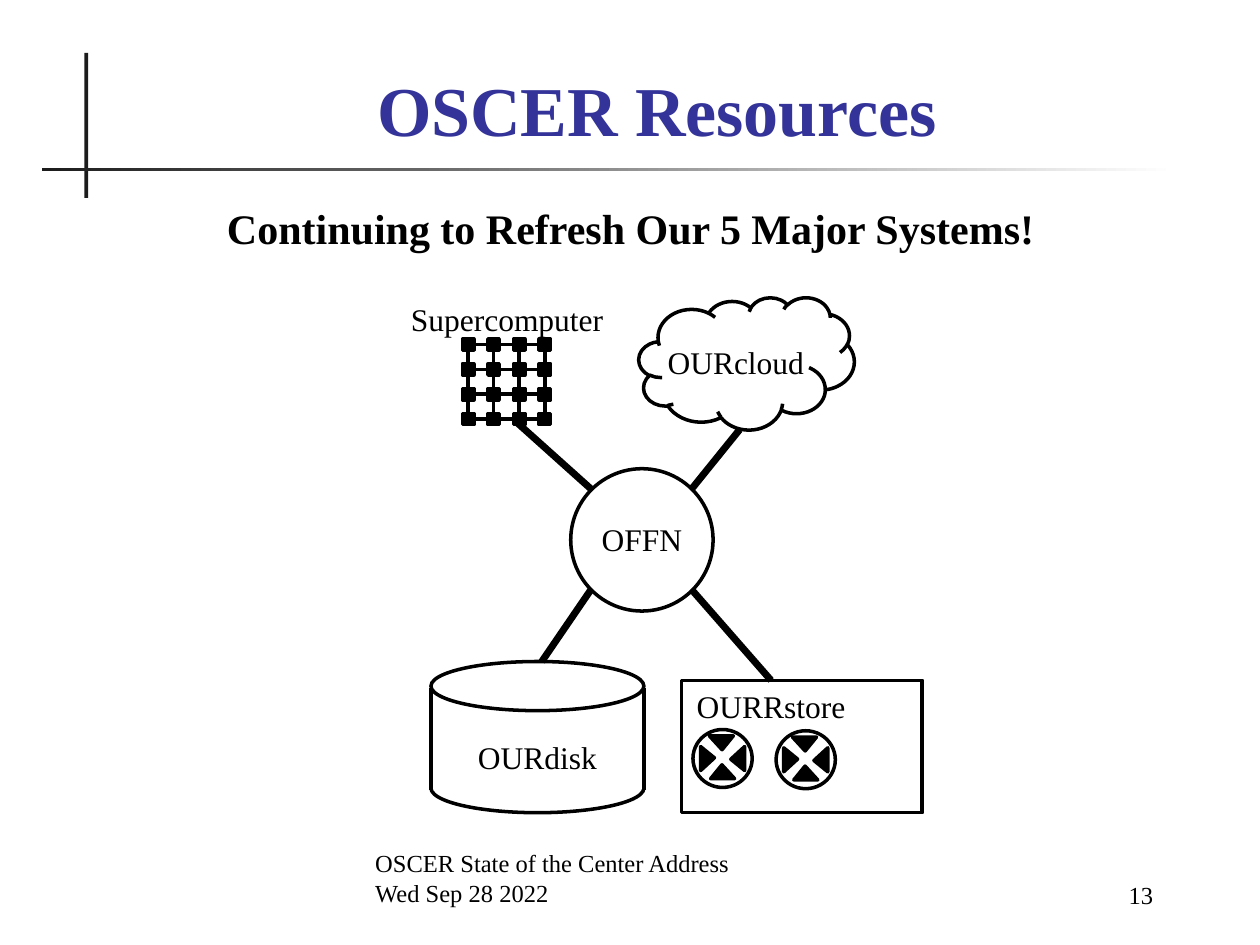
from dataclasses import dataclass
from itertools import product

from lxml import etree
from pptx import Presentation
from pptx.dml.color import RGBColor
from pptx.enum.shapes import MSO_CONNECTOR, MSO_SHAPE
from pptx.enum.text import MSO_ANCHOR, PP_ALIGN
from pptx.oxml.ns import qn
from pptx.util import Inches, Pt

RECT, OVAL = MSO_SHAPE.RECTANGLE, MSO_SHAPE.OVAL
CLOUD, TRIANGLE = MSO_SHAPE.CLOUD, MSO_SHAPE.ISOSCELES_TRIANGLE
STRAIGHT = MSO_CONNECTOR.STRAIGHT
TOP, BOTTOM = MSO_ANCHOR.TOP, MSO_ANCHOR.BOTTOM
LEFT, CENTER, RIGHT = PP_ALIGN.LEFT, PP_ALIGN.CENTER, PP_ALIGN.RIGHT
COLUMNS, ROWS = 100, 75


@dataclass(frozen=True)
class Theme:
    """Colours, font, type sizes and line widths of the slide."""
    font: str = "Times New Roman"
    ink: str = "000000"
    paper: str = "FFFFFF"
    accent: str = "333399"
    rule: str = "1C1C1C"
    title: int = 40
    subtitle: int = 24
    label: int = 18
    footer: int = 14
    outline: int = 2
    link: int = 4


THEME = Theme()


def grid(*cells):
    """Turn grid columns or rows, a tenth of an inch each, into lengths."""
    return [Inches(cell / 10) for cell in cells]


def rgb(code):
    """Turn a hex code into a colour."""
    return RGBColor.from_string(code)


def add_text(slide, box, lines, size, align=CENTER, anchor=TOP,
             color=THEME.ink, bold=False, top_inset=0.5):
    """Add a wrapped text box with one paragraph per line."""
    frame = slide.shapes.add_textbox(*grid(*box)).text_frame
    frame.word_wrap = True
    frame.vertical_anchor = anchor
    frame.margin_top, = grid(top_inset)
    frame.text = "\n".join(lines)
    for paragraph in frame.paragraphs:
        paragraph.alignment = align
        paragraph.font.name = THEME.font
        paragraph.font.size = Pt(size)
        paragraph.font.bold = bold
        paragraph.font.color.rgb = rgb(color)


def add_label(slide, box, name):
    """Add the name of one system."""
    add_text(slide, box, [name], THEME.label)


def add_outline(slide, kind, box, fill=None, line=THEME.ink):
    """Add a preset shape with an outline and an optional solid fill."""
    shape = slide.shapes.add_shape(kind, *grid(*box))
    shape.shadow.inherit = False
    if fill:
        shape.fill.solid()
        shape.fill.fore_color.rgb = rgb(fill)
    else:
        shape.fill.background()
    if line:
        shape.line.color.rgb = rgb(line)
        shape.line.width = Pt(THEME.outline)
    else:
        shape.line.fill.background()
    return shape


def add_line(slide, start, end, width=THEME.outline):
    """Add a straight line between two grid points."""
    line = slide.shapes.add_connector(STRAIGHT, *grid(*start, *end))
    line.line.color.rgb = rgb(THEME.ink)
    line.line.width = Pt(width)
    etree.SubElement(line._element.spPr, qn("a:effectLst"))


def add_heading(slide):
    """Add the crossed rules, the title and the subtitle."""
    add_outline(slide, RECT, (6.7, 4.2, 0.3, 11.5), THEME.rule, None)
    fading_rule = add_outline(slide, RECT, (3.3, 13.3, 90, 0.3), THEME.rule, None)
    fading_rule.fill.gradient()
    fading_rule.fill.gradient_angle = 0
    for stop, color in zip(fading_rule.fill.gradient_stops, (THEME.rule, THEME.paper)):
        stop.color.rgb = rgb(color)
    add_text(slide, (8.3, 5, 87.7, 7.4), ["OSCER Resources"], THEME.title,
             anchor=BOTTOM, color=THEME.accent, bold=True)
    add_text(slide, (6.7, 15, 86.7, 50.8), ["Continuing to Refresh Our 5 Major Systems!"],
             THEME.subtitle, bold=True, top_inset=1.1)


def add_footer(slide):
    """Add the event, its date and the slide number."""
    add_text(slide, (28.8, 67.5, 43.7, 5),
             ["OSCER State of the Center Address", "Wed Sep 28 2022"],
             THEME.footer, LEFT, BOTTOM)
    add_text(slide, (78.3, 67.7, 14.2, 5), ["13"], THEME.footer, RIGHT, BOTTOM)


def add_network(slide):
    """Add the central network hub."""
    add_outline(slide, OVAL, (45.3, 37.2, 11.3, 11.3))
    add_label(slide, (46.7, 40.8, 8.5, 4), "OFFN")


def add_disk(slide):
    """Add the disk as a cylinder."""
    left, width, height = 34.2, 16.9, 3.9
    for top in (52.5, 60.6):
        add_outline(slide, OVAL, (left, top, width, height))
    add_outline(slide, RECT, (left, 59.2, width, 3.3), THEME.paper, THEME.paper)
    for side in (left, left + width):
        add_line(slide, (side, 54.6), (side, 62.7))
    add_label(slide, (36.3, 58.1, 12.7, 4.2), "OURdisk")


def add_reel(slide, x, y):
    """Add a tape reel with four wedges pointing at its centre."""
    width, height = 1.9, 1.1
    add_outline(slide, OVAL, (x - 2.35, y - 2.3, 4.7, 4.6))
    for dx, dy, turn in ((0, 1.05, 0), (-0.1, -1.25, 180), (1.2, 0, 270), (-1.2, 0, 90)):
        wedge = add_outline(slide, TRIANGLE,
                            (x + dx - width / 2, y + dy - height / 2, width, height),
                            THEME.ink)
        wedge.adjustments[0] = 0.47
        wedge.rotation = turn


def add_tape_store(slide):
    """Add the tape store with its two reels."""
    add_label(slide, (54.1, 54, 14.2, 4), "OURRstore")
    add_outline(slide, RECT, (54.1, 54, 19.1, 10.5))
    for x, y in ((57.35, 60.2), (63.95, 60.3)):
        add_reel(slide, x, y)


def add_supercomputer(slide):
    """Add the supercomputer as a mesh of linked nodes."""
    count, node, pitch_x, pitch_y = 4, 0.9, 2.03, 1.97
    for row, column in product(range(count), repeat=2):
        x, y = 37.15 + column * pitch_x, 27.35 + row * pitch_y
        add_outline(slide, RECT, (x - node / 2, y - node / 2, node, node), THEME.ink)
        if column < count - 1:
            add_line(slide, (x + node / 2, y), (x + pitch_x - node / 2, y))
        if row < count - 1:
            add_line(slide, (x, y + node / 2), (x, y + pitch_y - node / 2))
    add_label(slide, (31.3, 23.3, 17.9, 4), "Supercomputer")


def add_cloud(slide):
    """Add the cloud system."""
    add_outline(slide, CLOUD, (50.7, 23.6, 17.1, 10.5))
    add_label(slide, (51.3, 26.7, 14.2, 4), "OURcloud")


def add_links(slide):
    """Join the hub to the four systems around it."""
    left, right, upper, lower = 46.9, 54.9, 38.8, 46.8
    for hub_edge, system in (((left, upper), (41.1, 33.6)), ((right, upper), (58.7, 34.1)),
                             ((left, lower), (43, 52.5)), ((right, lower), (61.2, 54))):
        add_line(slide, hub_edge, system, THEME.link)


def main():
    """Build the slide and save it."""
    deck = Presentation()
    deck.slide_width, deck.slide_height = grid(COLUMNS, ROWS)
    slide = deck.slides.add_slide(deck.slide_layouts[6])
    for add_part in (add_heading, add_footer, add_network, add_disk, add_tape_store,
                     add_supercomputer, add_cloud, add_links):
        add_part(slide)
    deck.save("out.pptx")


if __name__ == "__main__":
    main()
